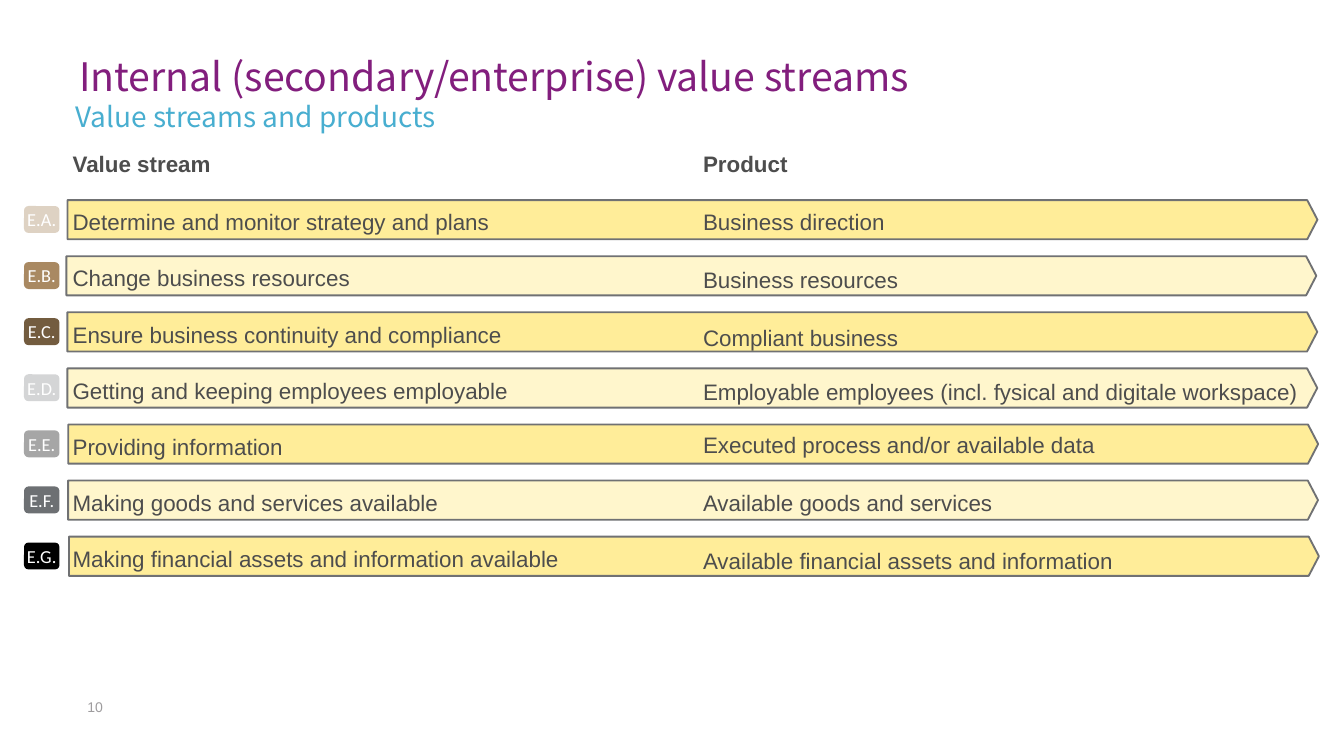
from pptx import Presentation
from pptx.dml.color import RGBColor
from pptx.enum import shapes, text
from pptx.util import Pt

COLORS = {
    "title": "821E7D", "subtitle": "48AED0", "body": "4D4D4D", "number": "9E9C9E",
    "outline": "707173", "strong": "FFED99", "pale": "FFF6CC", "label": "FFFFFF",
}
SANS, HEADING, LABEL = "Arial", "Noto Sans CJK TC", "Calibri"

# label, label fill, arrow left, value stream, product, space after product
ROWS = [
    ("E.A.", "DED2C3", 36.2, "Determine and monitor strategy and plans", "Business direction", 4.5),
    ("E.B.", "A98962", 35.6, "Change business resources", "Business resources", 4.5),
    ("E.C.", "735C3F", 36.1, "Ensure business continuity and compliance", "Compliant business", 2),
    ("E.D.", "D4D5D6", 36.1, "Getting and keeping employees employable",
     "Employable employees (incl. fysical and digitale workspace)", 2),
    ("E.E.", "A6A6A6", 36.6, "Providing information", "Executed process and/or available data", 4.5),
    ("E.F.", "6D7073", 36.5, "Making goods and services available", "Available goods and services", 4.5),
    ("E.G.", "000000", 37, "Making financial assets and information available",
     "Available financial assets and information", 4.5),
]
ROW_TOP, ROW_STEP = 107.2, 30.05


def prepare(box, left, top, width, height, anchor=text.MSO_ANCHOR.TOP, inset=0):
    """Place a box and return its text frame; inset is the top and bottom margin."""
    box.left, box.top, box.width, box.height = Pt(left), Pt(top), Pt(width), Pt(height)
    frame = box.text_frame
    frame.word_wrap = True
    frame.auto_size = text.MSO_AUTO_SIZE.NONE
    frame.vertical_anchor = anchor
    frame.margin_left = frame.margin_right = 0
    frame.margin_top = frame.margin_bottom = Pt(inset)
    return frame


def write(para, words, size, color, font, bold=False, align=text.PP_ALIGN.LEFT):
    para.alignment = align
    span = para.add_run()
    span.text = words
    span.font.size, span.font.name, span.font.bold = Pt(size), font, bold
    span.font.color.rgb = RGBColor.from_string(COLORS[color])


deck = Presentation()
deck.slide_width, deck.slide_height = Pt(720), Pt(405)
page = deck.slides.add_slide(deck.slide_layouts[3])
title, streams, products = page.placeholders

# Headings and page number
para = prepare(title, 42.5, 25.2, 524, 28).paragraphs[0]
para.line_spacing = Pt(28)
write(para, "Internal (secondary/enterprise) value streams", 21, "title", HEADING)

subtitle = page.shapes.add_textbox(0, 0, 0, 0)
para = prepare(subtitle, 40.3, 49.7, 599, 17.3).paragraphs[0]
para.line_spacing = 1.2
write(para, "Value streams and products", 15, "subtitle", HEADING)

number = page.shapes.add_textbox(0, 0, 0, 0)
write(prepare(number, 46.8, 374.4, 28, 17.3).paragraphs[0], "10", 7.5, "number", SANS)

# Arrows with their labels
for index, (label, label_fill, left, *_) in enumerate(ROWS):
    top = ROW_TOP + index * ROW_STEP
    arrow = page.shapes.add_shape(
        shapes.MSO_SHAPE.PENTAGON, Pt(left), Pt(top), Pt(669.6), Pt(21))
    arrow.adjustments[0] = 0.26
    arrow.shadow.inherit = False
    arrow.fill.solid()
    arrow.fill.fore_color.rgb = RGBColor.from_string(COLORS["pale" if index % 2 else "strong"])
    arrow.line.color.rgb = RGBColor.from_string(COLORS["outline"])
    arrow.line.width = Pt(1)

    badge = page.shapes.add_shape(shapes.MSO_SHAPE.ROUNDED_RECTANGLE, 0, 0, 0, 0)
    badge.shadow.inherit = False
    badge.fill.solid()
    badge.fill.fore_color.rgb = RGBColor.from_string(label_fill)
    badge.line.fill.background()
    frame = prepare(badge, 12.9, top + 3.2, 19, 14.4, text.MSO_ANCHOR.MIDDLE, 3.6)
    write(frame.paragraphs[0], label, 9.8, "label", LABEL, align=text.PP_ALIGN.CENTER)

# Text columns, brought in front of the arrows
columns = [
    (products, 376.6, 340, [("Product", 4.5)] + [(row[4], row[5]) for row in ROWS]),
    (streams, 38.9, 530.6, [("Value stream", 4.5)] + [(row[3], 3.5) for row in ROWS]),
]
for box, left, width, lines in columns:
    box.element.getparent().append(box.element)
    frame = prepare(box, left, 73.4, width, 268.6)
    for index, (words, space_after) in enumerate(lines):
        para = frame.add_paragraph() if index else frame.paragraphs[0]
        properties = para._p.get_or_add_pPr()
        properties.set("marL", "0")
        properties.set("indent", "0")
        properties.insert_element_before(
            properties.makeelement(
                "{http://schemas.openxmlformats.org/drawingml/2006/main}buNone", {}),
            "a:tabLst", "a:defRPr", "a:extLst")
        para.line_spacing = 1.5
        para.space_before = Pt(5 if index else 0)
        para.space_after = Pt(space_after)
        write(para, words, 12, "body", SANS, bold=index == 0)

deck.save("out.pptx")
